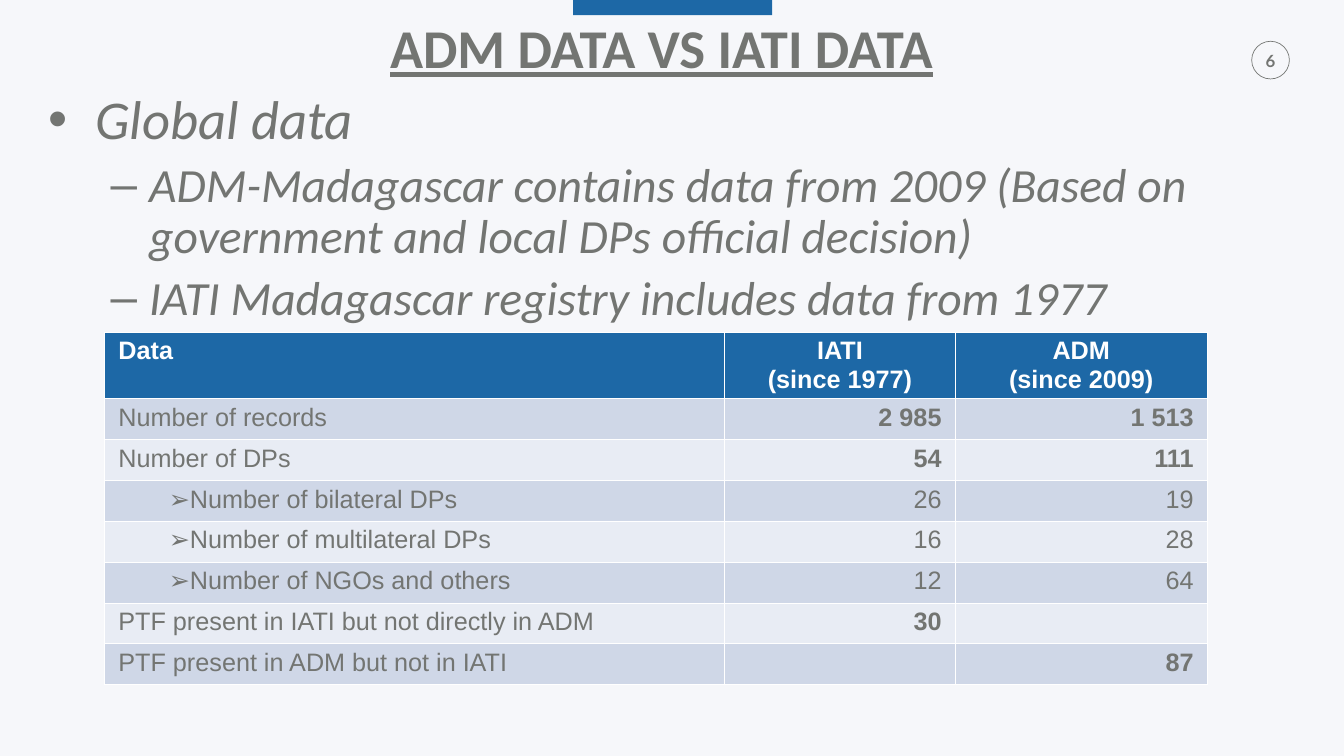
"""Build the ADM versus IATI data comparison slide."""
from typing import NamedTuple

from lxml import etree
from pptx import Presentation
from pptx.dml.color import RGBColor
from pptx.enum.shapes import MSO_SHAPE
from pptx.enum.text import MSO_ANCHOR, MSO_AUTO_SIZE, PP_ALIGN
from pptx.oxml.ns import qn
from pptx.util import Cm, Pt

LEFT, CENTER, RIGHT = PP_ALIGN.LEFT, PP_ALIGN.CENTER, PP_ALIGN.RIGHT
MIDDLE, TOP = MSO_ANCHOR.MIDDLE, MSO_ANCHOR.TOP
NO_AUTOFIT = MSO_AUTO_SIZE.NONE
ELLIPSE, RECTANGLE = MSO_SHAPE.OVAL, MSO_SHAPE.RECTANGLE

BACKGROUND = RGBColor(0xF6, 0xF7, 0xFA)
GREY = RGBColor(0x73, 0x75, 0x72)
BLUE = RGBColor(0x1D, 0x68, 0xA6)
WHITE = RGBColor(0xFF, 0xFF, 0xFF)
BANDS = (RGBColor(0xCF, 0xD7, 0xE7), RGBColor(0xE8, 0xEC, 0xF4))


class Box(NamedTuple):
    left: float
    top: float
    width: float
    height: float

    def lengths(self) -> tuple:
        return tuple(Cm(v) for v in self)


class Bullet(NamedTuple):
    char: str
    margin: float
    indent: float


class Item(NamedTuple):
    text: str
    level: int


class Row(NamedTuple):
    label: str
    iati: str
    adm: str
    is_sub: bool = False


LEVEL_BULLETS = (Bullet("•", 2.34, -2.34), Bullet("–", 5.05, -1.93))
LEVEL_SIZES = (78, 68)
LEVEL_GAPS = (0, 14)
SUB_BULLET = Bullet("➢", 2.54, 0)

ITEMS = (
    Item("Global data", 0),
    Item("ADM-Madagascar contains data from 2009 (Based on government and "
         "local DPs official decision)", 1),
    Item("IATI Madagascar registry includes data from 1977", 1),
)
HEADER = Row("Data", "IATI\n(since 1977)", "ADM\n(since 2009)")
ROWS = (
    Row("Number of records", "2 985", "1 513"),
    Row("Number of DPs", "54", "111"),
    Row("Number of bilateral DPs", "26", "19", True),
    Row("Number of multilateral DPs", "16", "28", True),
    Row("Number of NGOs and others", "12", "64", True),
    Row("PTF present in IATI but not directly in ADM", "30", ""),
    Row("PTF present in ADM but not in IATI", "", "87"),
)
COLUMN_WIDTHS = (31.24, 11.61, 12.7)
HEADER_HEIGHT, ROW_HEIGHT = 3.3, 2.06


def set_font(p, name: str, size: int, color: RGBColor, bold=False, italic=False) -> None:
    f = p.font
    f.name, f.size, f.bold, f.italic = name, Pt(size), bold, italic
    f.color.rgb = color


def set_bullet(p, bullet: Bullet) -> None:
    ppr = p._p.get_or_add_pPr()
    ppr.set("marL", str(Cm(bullet.margin)))
    ppr.set("indent", str(Cm(bullet.indent)))
    font = etree.Element(qn("a:buFont"), typeface="Arial")
    char = etree.Element(qn("a:buChar"), char=bullet.char)
    end = ppr.find(qn("a:defRPr"))
    end.addprevious(font)
    end.addprevious(char)


def set_frame(tf, anchor, side: float, edge: float) -> None:
    tf.word_wrap = True
    tf.auto_size = NO_AUTOFIT
    tf.vertical_anchor = anchor
    tf.margin_left = tf.margin_right = Cm(side)
    tf.margin_top = tf.margin_bottom = Cm(edge)


def place(sp, box: Box) -> None:
    sp.left, sp.top, sp.width, sp.height = box.lengths()


def add_title(s, text: str) -> None:
    sp = s.shapes.title
    place(sp, Box(1.07, 0.79, 64.52, 3.58))
    set_frame(sp.text_frame, MIDDLE, 0.61, 0.3)
    p = sp.text_frame.paragraphs[0]
    p.text, p.alignment, p.line_spacing = text, CENTER, 0.9
    set_font(p, "Calibri", 78, GREY, bold=True)
    p.font.underline = True


def add_body(s, items: tuple[Item, ...]) -> None:
    sp = s.placeholders[1]
    place(sp, Box(1.85, 4.37, 63.98, 32.69))
    tf = sp.text_frame
    set_frame(tf, TOP, 0.61, 0.3)
    for i, item in enumerate(items):
        p = tf.add_paragraph() if i else tf.paragraphs[0]
        p.text, p.level, p.line_spacing = item.text, item.level, 0.9
        p.space_before = Pt(LEVEL_GAPS[item.level])
        set_font(p, "Calibri", LEVEL_SIZES[item.level], GREY, italic=True)
        set_bullet(p, LEVEL_BULLETS[item.level])


def add_decor(s, number: str) -> None:
    circle = s.shapes.add_shape(ELLIPSE, *Box(63.07, 2.08, 1.9, 1.9).lengths())
    circle.shadow.inherit = False
    circle.fill.background()
    circle.line.color.rgb = GREY
    circle.line.width = Pt(1)
    tab = s.shapes.add_shape(RECTANGLE, *Box(28.88, 0, 10.03, 0.76).lengths())
    tab.shadow.inherit = False
    tab.fill.solid()
    tab.fill.fore_color.rgb = BLUE
    tab.line.fill.background()
    sp = s.shapes.add_textbox(*Box(62.99, 2.29, 2.06, 1.55).lengths())
    set_frame(sp.text_frame, TOP, 0.5, 0.25)
    p = sp.text_frame.paragraphs[0]
    p.text, p.alignment = number, CENTER
    set_font(p, "Lato", 24, GREY, bold=True)


def fill_cell(cell, text: str, fill: RGBColor, color: RGBColor, align, bold: bool) -> None:
    cell.fill.solid()
    cell.fill.fore_color.rgb = fill
    cell.margin_left = cell.margin_right = Cm(0.69)
    cell.margin_top = cell.margin_bottom = Cm(0.25)
    cell.text = text
    for p in cell.text_frame.paragraphs:
        p.alignment = align
        set_font(p, "Arial", 36, color, bold=bold)


def add_data_table(s, header: Row, rows: tuple[Row, ...]) -> None:
    height = HEADER_HEIGHT + ROW_HEIGHT * len(rows)
    box = Box(5.28, 16.74, sum(COLUMN_WIDTHS), height)
    frame = s.shapes.add_table(len(rows) + 1, len(COLUMN_WIDTHS), *box.lengths())
    table = frame.table
    for column, width in zip(table.columns, COLUMN_WIDTHS):
        column.width = Cm(width)
    table.rows[0].height = Cm(HEADER_HEIGHT)
    for c, text in enumerate(header[:3]):
        fill_cell(table.cell(0, c), text, BLUE, WHITE, CENTER if c else LEFT, True)
    for r, row in enumerate(rows, 1):
        table.rows[r].height = Cm(ROW_HEIGHT)
        for c, text in enumerate(row[:3]):
            fill_cell(table.cell(r, c), text, BANDS[(r - 1) % 2], GREY,
                      RIGHT if c else LEFT, c > 0 and not row.is_sub)
        if row.is_sub:
            p = table.cell(r, 0).text_frame.paragraphs[0]
            p.level = 1
            set_bullet(p, SUB_BULLET)


def main() -> None:
    prs = Presentation()
    prs.slide_width, prs.slide_height = Cm(67.72), Cm(38.1)
    s = prs.slides.add_slide(prs.slide_layouts[1])
    s.background.fill.solid()
    s.background.fill.fore_color.rgb = BACKGROUND
    add_decor(s, "6")
    add_title(s, "ADM DATA VS IATI DATA")
    add_body(s, ITEMS)
    add_data_table(s, HEADER, ROWS)
    prs.save("out.pptx")


if __name__ == "__main__":
    main()
